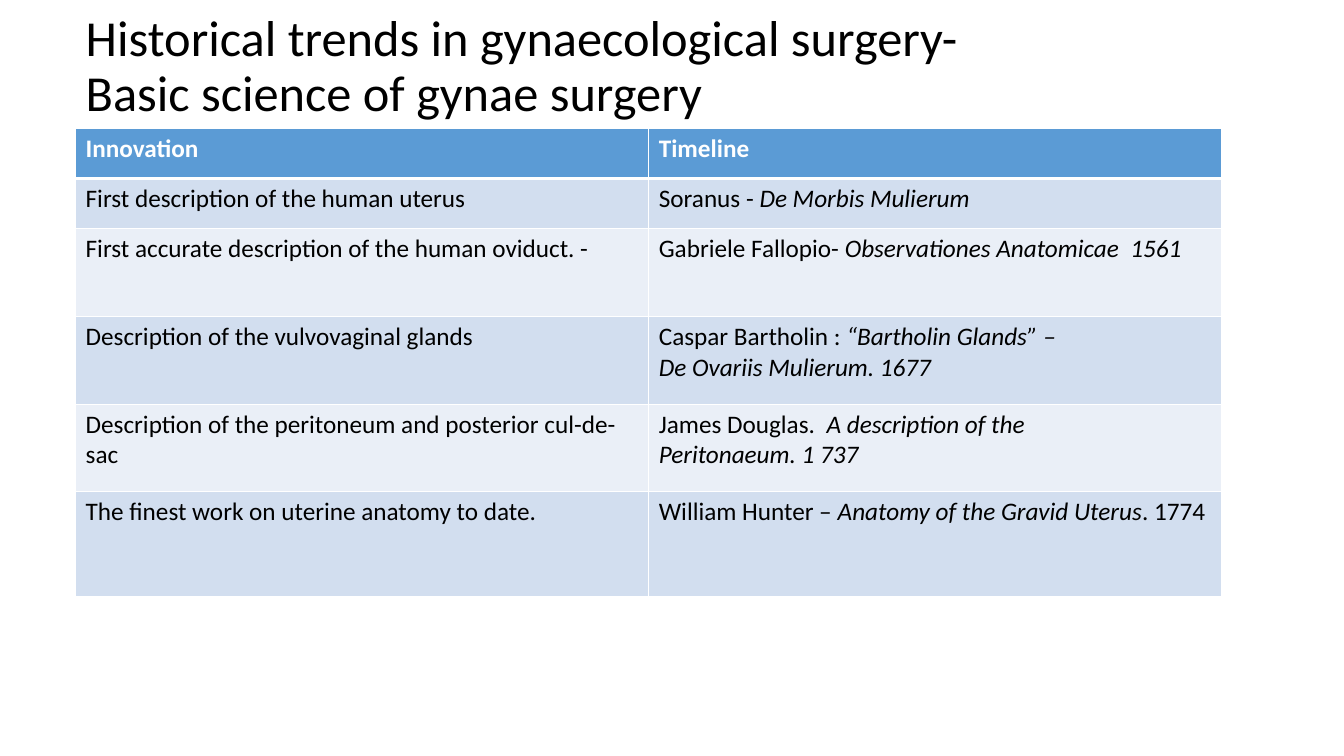
from lxml import etree
from pptx import Presentation
from pptx.dml.color import RGBColor
from pptx.enum import text as t
from pptx.oxml.ns import qn
from pptx.util import Inches, Pt

HUES = {"ink": "000000", "white": "FFFFFF", "head": "5B9BD5",
        "odd": "D2DEEF", "even": "EAEFF7"}
LEFT, WIDTH = 0.75, 11.37
TITLE = "Historical trends in gynaecological surgery-\nBasic science of gynae surgery"
# Row height, then one text per column; asterisks enclose italics.
ROWS = [
    (0.5, "Innovation", "Timeline"),
    (0.5, "First description of the human uterus", "Soranus - *De Morbis Mulierum*"),
    (0.87, "First accurate description of the human oviduct. -",
     "Gabriele Fallopio- *Observationes Anatomicae  1561*"),
    (0.87, "Description of the vulvovaginal glands",
     "Caspar Bartholin : *“Bartholin Glands” –*\n*De Ovariis Mulierum. 1677*"),
    (0.87, "Description of the peritoneum and posterior cul-de-sac",
     "James Douglas.  *A description of the*\n*Peritonaeum. 1 737*"),
    (1.04, "The finest work on uterine anatomy to date.",
     "William Hunter – *Anatomy of the Gravid Uterus*. 1774"),
]


def style(font, hue, **form):
    for key, value in {"name": "Calibri", **form}.items():
        setattr(font, key, value)
    font.color.rgb = RGBColor.from_string(HUES[hue])


def add_title(slide):
    title = slide.shapes.title
    title.left, title.top = Inches(LEFT), Inches(0)
    title.width, title.height = Inches(WIDTH), Inches(1.34)
    frame = title.text_frame
    frame.word_wrap = True
    frame.auto_size = t.MSO_AUTO_SIZE.NONE
    frame.vertical_anchor = t.MSO_ANCHOR.MIDDLE
    para = frame.paragraphs[0]
    para.text = TITLE.replace("\n", "\v")
    para.alignment = t.PP_ALIGN.LEFT
    para.line_spacing = 0.9
    style(para.font, "ink", size=Pt(36))
    for run in para.runs:
        style(run.font, "ink", size=Pt(36))


def edge(cell, base):
    """Draw white cell borders, with the given width at the bottom."""
    props = cell._tc.get_or_add_tcPr()
    for side, width in {"L": 1, "R": 1, "T": 1, "B": base}.items():
        line = etree.SubElement(props, qn(f"a:ln{side}"), w=str(Pt(width)))
        fill = etree.SubElement(line, qn("a:solidFill"))
        etree.SubElement(fill, qn("a:srgbClr"), val=HUES["white"])


def write(cell, words, head):
    frame = cell.text_frame
    for row, line in enumerate(words.split("\n")):
        para = frame.add_paragraph() if row else frame.paragraphs[0]
        for part, piece in enumerate(line.split("*")):
            if piece:
                run = para.add_run()
                run.text = piece
                style(run.font, "white" if head else "ink", size=Pt(18),
                      bold=head, italic=part % 2 == 1)


def add_grid(slide):
    high = sum(row[0] for row in ROWS)
    grid = slide.shapes.add_table(len(ROWS), 2, Inches(LEFT), Inches(1.27),
                                  Inches(WIDTH), Inches(high)).table
    for row, (tall, *texts) in enumerate(ROWS):
        grid.rows[row].height = Inches(tall)
        head = row == 0
        hue = "head" if head else "odd" if row % 2 else "even"
        for col, words in enumerate(texts):
            cell = grid.cell(row, col)
            write(cell, words, head)
            edge(cell, 3 if head else 1)
            cell.fill.solid()
            cell.fill.fore_color.rgb = RGBColor.from_string(HUES[hue])


def main():
    deck = Presentation()
    deck.slide_width, deck.slide_height = Inches(13.33), Inches(7.5)
    slide = deck.slides.add_slide(deck.slide_layouts[5])
    add_title(slide)
    add_grid(slide)
    deck.save("out.pptx")


if __name__ == "__main__":
    main()
